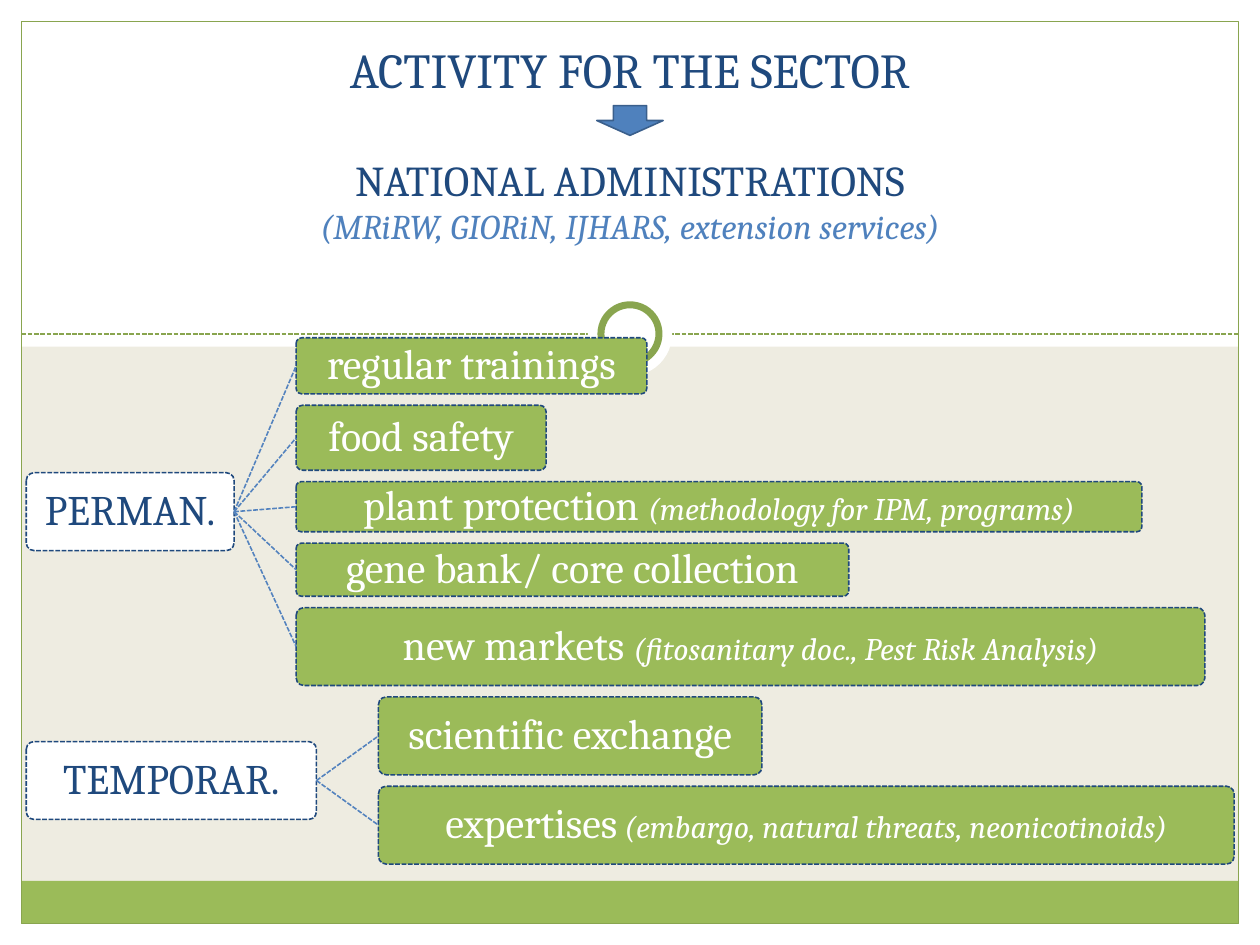
"""Build the slide on activity for the sector."""
from lxml import etree
from pptx import Presentation
from pptx.dml.color import RGBColor
from pptx.enum import dml, shapes, text
from pptx.oxml.ns import qn
from pptx.util import Cm, Pt

COLORS = {"white": "FFFFFF", "sand": "EEECE1", "green": "9BBB59", "olive": "89A54F",
          "navy": "1F497D", "blue": "4F81BD", "link": "5483BE", "edge": "3A5F8C"}
FONT = "Cambria"
SHAPE = shapes.MSO_SHAPE

TITLE = [
    ("ACTIVITY FOR THE SECTOR", dict(size=27.9, color="navy"), 0),
    ("NATIONAL ADMINISTRATIONS", dict(size=24.3, color="navy"), 32),
    ("(MRiRW, GIORiN, IJHARS, extension services)",
     dict(size=19.8, color="blue", italic=True), 0),
]
# label, width, items of (text, detail, width, height)
GROUPS = [
    ("PERMAN.", 4.19, [
        ("regular trainings", "", 7.07, 1.13),
        ("food safety", "", 5.04, 1.31),
        ("plant protection ", "(methodology for IPM, programs)", 17.05, 1.01),
        ("gene bank/ core collection", "", 11.14, 1.07),
        ("new markets ", "(fitosanitary doc., Pest Risk Analysis)", 18.32, 1.57)]),
    ("TEMPORAR.", 5.85, [
        ("scientific exchange", "", 7.73, 1.57),
        ("expertises", " (embargo, natural threats, neonicotinoids)", 17.25, 1.57)]),
]
LEFT, TOP, GAP, REACH, LABEL_H = 0.53, 6.81, 0.23, 1.25, 1.57
WIDTH, HEIGHT, EDGE, RULE_Y = 25.4, 19.05, 0.43, 6.73
PANELS = [
    (0, HEIGHT - EDGE, WIDTH, EDGE, "white"),
    (WIDTH - EDGE, 0, EDGE, HEIGHT, "white"),
    (0, 0, EDGE, HEIGHT, "white"),
    (0, 0, WIDTH, 6.99, "white"),
    (EDGE, 17.76, WIDTH - 2 * EDGE, 0.86, "green"),
]


def rgb(name):
    return RGBColor.from_string(COLORS[name])


def style_line(line, color, width, dashed=False):
    line.color.rgb = rgb(color)
    line.width = Pt(width)
    if dashed:
        line.dash_style = dml.MSO_LINE.SQUARE_DOT


def add_shape(s, kind, box, fill=None, line=None, width=0.9, dashed=False):
    sp = s.shapes.add_shape(kind, *(Cm(v) for v in box))
    sp.shadow.inherit = False
    if fill:
        sp.fill.solid()
        sp.fill.fore_color.rgb = rgb(fill)
    else:
        sp.fill.background()
    if line:
        style_line(sp.line, line, width, dashed)
    else:
        sp.line.fill.background()
    return sp


def add_line(s, x1, y1, x2, y2, color):
    line = s.shapes.add_connector(shapes.MSO_CONNECTOR.STRAIGHT,
                                  Cm(x1), Cm(y1), Cm(x2), Cm(y2))
    style_line(line.line, color, 0.9, True)
    etree.SubElement(line._element.spPr, qn("a:effectLst"))
    return line


def add_run(p, value, size=24, color="white", italic=False):
    r = p.add_run()
    r.text = value
    r.font.name, r.font.size = FONT, Pt(size)
    r.font.bold, r.font.italic = False, italic
    r.font.color.rgb = rgb(color)


def add_box(s, box, fill, color, value, detail=""):
    sp = add_shape(s, SHAPE.ROUNDED_RECTANGLE, box, fill, "navy", dashed=True)
    sp.adjustments[0] = 0.1
    tf = sp.text_frame
    tf.margin_left = tf.margin_right = tf.margin_top = tf.margin_bottom = Cm(0.08)
    tf.vertical_anchor = text.MSO_ANCHOR.MIDDLE
    p = tf.paragraphs[0]
    p.alignment, p.line_spacing = text.PP_ALIGN.CENTER, 0.9
    add_run(p, value, color=color)
    if detail:
        add_run(p, detail, size=18, italic=True)
    return sp


def add_backdrop(s):
    s.background.fill.solid()
    s.background.fill.fore_color.rgb = rgb("sand")
    for *box, fill in PANELS:
        add_shape(s, SHAPE.RECTANGLE, box, fill)
    add_line(s, EDGE, RULE_Y, WIDTH - EDGE, RULE_Y, "olive")
    add_shape(s, SHAPE.RECTANGLE, (EDGE, EDGE, WIDTH - 2 * EDGE, HEIGHT - 2 * EDGE),
              line="olive", width=0.75)
    for size, line in ((1.7, None), (1.17, "olive")):
        add_shape(s, SHAPE.OVAL, ((WIDTH - size) / 2, RULE_Y - size / 2, size, size),
                  "white", line, 4)


def add_groups(s):
    y = TOP
    for label, width, items in GROUPS:
        span = sum(item[3] for item in items) + GAP * (len(items) - 1)
        middle, right = y + span / 2, LEFT + width
        parent = add_box(s, (LEFT, middle - LABEL_H / 2, width, LABEL_H),
                         "white", "navy", label)
        for value, detail, w, h in items:
            child = add_box(s, (right + REACH, y, w, h), "green", "white", value, detail)
            link = add_line(s, right, middle, right + REACH, y + h / 2, "link")
            link.begin_connect(parent, 3)
            link.end_connect(child, 1)
            y += h + GAP


def add_title(s):
    sp = s.shapes.title
    s.shapes._spTree.append(sp._element)
    sp.left, sp.top, sp.width, sp.height = Cm(0.5), Cm(0.74), Cm(24.4), Cm(5.41)
    tf = sp.text_frame
    tf.auto_size = text.MSO_AUTO_SIZE.NONE
    tf.word_wrap = True
    tf.vertical_anchor = text.MSO_ANCHOR.TOP
    tf.margin_top = Cm(0.05)
    for i, (value, style, before) in enumerate(TITLE):
        p = tf.add_paragraph() if i else tf.paragraphs[0]
        p.alignment = text.PP_ALIGN.CENTER
        if before:
            p.space_before = Pt(before)
        add_run(p, value, **style)


def main():
    prs = Presentation()
    prs.slide_width, prs.slide_height = Cm(WIDTH), Cm(HEIGHT)
    s = prs.slides.add_slide(prs.slide_layouts[5])
    add_backdrop(s)
    add_groups(s)
    add_title(s)
    add_shape(s, SHAPE.DOWN_ARROW, (12.03, 2.13, 1.34, 0.6), "blue", "edge")
    prs.save("out.pptx")


if __name__ == "__main__":
    main()
